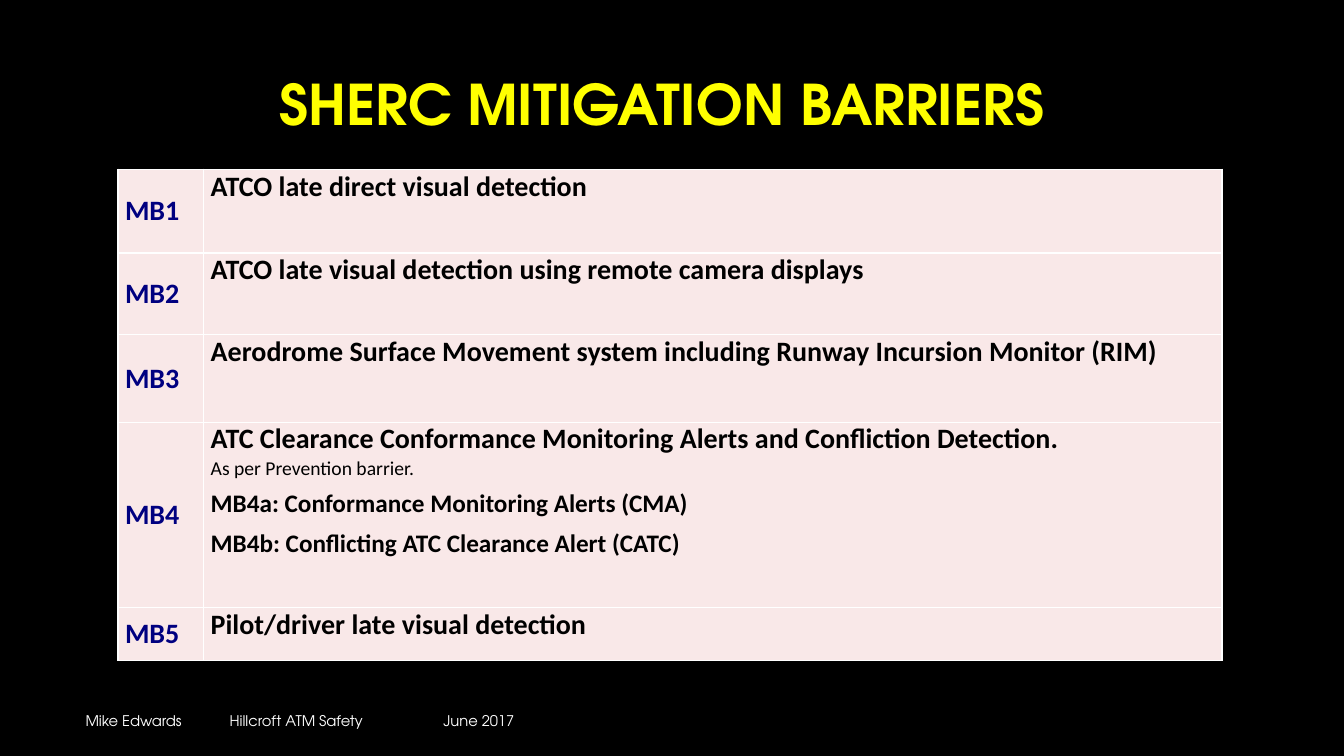
from lxml import etree
from pptx import Presentation
from pptx.dml.color import RGBColor
from pptx.enum.text import MSO_ANCHOR, MSO_AUTO_SIZE, PP_ALIGN
from pptx.oxml.ns import qn
from pptx.util import Inches, Pt

CENTER, LEFT, JUSTIFY = PP_ALIGN.CENTER, PP_ALIGN.LEFT, PP_ALIGN.JUSTIFY
MIDDLE, TOP = MSO_ANCHOR.MIDDLE, MSO_ANCHOR.TOP
NO_FIT = MSO_AUTO_SIZE.NONE

BLACK, WHITE, YELLOW = "000000", "FFFFFF", "FFFF00"
NAVY, PINK = "000080", "F9E8E8"

# Each line of a barrier: text, size, bold, space before, space after
BARRIERS = [
    ("MB1", 0.83, [("ATCO late direct visual detection", 20, True, 0, 3)]),
    ("MB2", 0.81, [("ATCO late visual detection using remote camera displays", 20, True, 0, 3)]),
    ("MB3", 0.87, [("Aerodrome Surface Movement system including "
                    "Runway Incursion Monitor (RIM)", 20, True, 0, 3)]),
    ("MB4", 1.84, [
        ("ATC Clearance Conformance Monitoring Alerts and Confliction Detection.", 20, True, 0, 0),
        ("As per Prevention barrier.", 14, False, 0, 3),
        ("MB4a: Conformance Monitoring Alerts (CMA)", 18, True, 3, 3),
        ("MB4b: Conflicting ATC Clearance Alert (CATC)", 18, True, 3, 3)]),
    ("MB5", 0.52, [("Pilot/driver late visual detection", 20, True, 0, 3)]),
]


def rgb(code):
    return RGBColor.from_string(code)


class Deck:
    head = "TeX Gyre Adventor"
    body = "Calibri"

    def __init__(self, prs):
        self.slide = prs.slides.add_slide(prs.slide_layouts[5])
        fill = self.slide.background.fill
        fill.solid()
        fill.fore_color.rgb = rgb(BLACK)

    def style(self, para, face, size, color, bold=False, align=LEFT):
        para.alignment = align
        for run in para.runs:
            font = run.font
            font.name, font.size, font.bold = face, Pt(size), bold
            font.color.rgb = rgb(color)

    def place(self, shape, left, top, width, height):
        shape.left, shape.top = Inches(left), Inches(top)
        shape.width, shape.height = Inches(width), Inches(height)

    def title(self, text, *box):
        shape = self.slide.shapes.title
        self.place(shape, *box)
        frame = shape.text_frame
        frame.text = text
        frame.auto_size, frame.vertical_anchor = NO_FIT, MIDDLE
        para = frame.paragraphs[0]
        para.line_spacing = 0.9
        self.style(para, self.head, 40, YELLOW, True, CENTER)

    def footer(self, parts, stops, *box):
        shape = self.slide.shapes.add_textbox(*map(Inches, box))
        frame = shape.text_frame
        frame.word_wrap, frame.vertical_anchor = True, MIDDLE
        para = frame.paragraphs[0]
        para.text = "\t".join(parts)
        tabs = etree.SubElement(para._p.get_or_add_pPr(), qn("a:tabLst"))
        for stop in stops:
            etree.SubElement(tabs, qn("a:tab"), pos=str(Inches(stop)), algn="l")
        self.style(para, self.head, 10.5, WHITE)

    def border(self, cell):
        props = cell._tc.get_or_add_tcPr()
        for side in ("lnL", "lnR", "lnT", "lnB"):
            line = etree.SubElement(props, qn("a:" + side), w=str(Pt(1)))
            fill = etree.SubElement(line, qn("a:solidFill"))
            etree.SubElement(fill, qn("a:srgbClr"), val=WHITE)

    def cell(self, cell, lines, color, align, anchor):
        self.border(cell)
        cell.fill.solid()
        cell.fill.fore_color.rgb = rgb(PINK)
        cell.margin_left = cell.margin_right = Inches(0.07)
        cell.margin_top = cell.margin_bottom = 0
        cell.vertical_anchor = anchor
        frame = cell.text_frame
        frame.text = "\n".join(line[0] for line in lines)
        for para, (_, size, bold, before, after) in zip(frame.paragraphs, lines):
            para.space_before, para.space_after = Pt(before), Pt(after)
            self.style(para, self.body, size, color, bold, align)

    def table(self, rows, widths, left, top):
        high = sum(row[1] for row in rows)
        frame = self.slide.shapes.add_table(
            len(rows), len(widths), Inches(left), Inches(top),
            Inches(sum(widths)), Inches(high))
        grid = frame.table
        grid.first_row = grid.horz_banding = False
        for col, width in zip(grid.columns, widths):
            col.width = Inches(width)
        for row, (code, height, lines) in zip(grid.rows, rows):
            row.height = Inches(height)
            tag, text = row.cells
            self.cell(tag, [(code, 20, True, 0, 3)], NAVY, LEFT, MIDDLE)
            self.cell(text, lines, BLACK, JUSTIFY, TOP)


def main():
    prs = Presentation()
    prs.slide_width, prs.slide_height = Inches(13.33), Inches(7.5)
    deck = Deck(prs)

    # Heading
    deck.title("SHERC MITIGATION BARRIERS", 1.84, 0.58, 9.45, 0.97)

    # Barrier table
    deck.table(BARRIERS, [0.85, 10.1], 1.17, 1.68)

    # Footer line
    deck.footer(["Mike Edwards", "Hillcroft ATM Safety", "June 2017"],
                [1.43, 3.55], 0.75, 6.95, 8.5, 0.4)

    prs.save("out.pptx")


if __name__ == "__main__":
    main()
